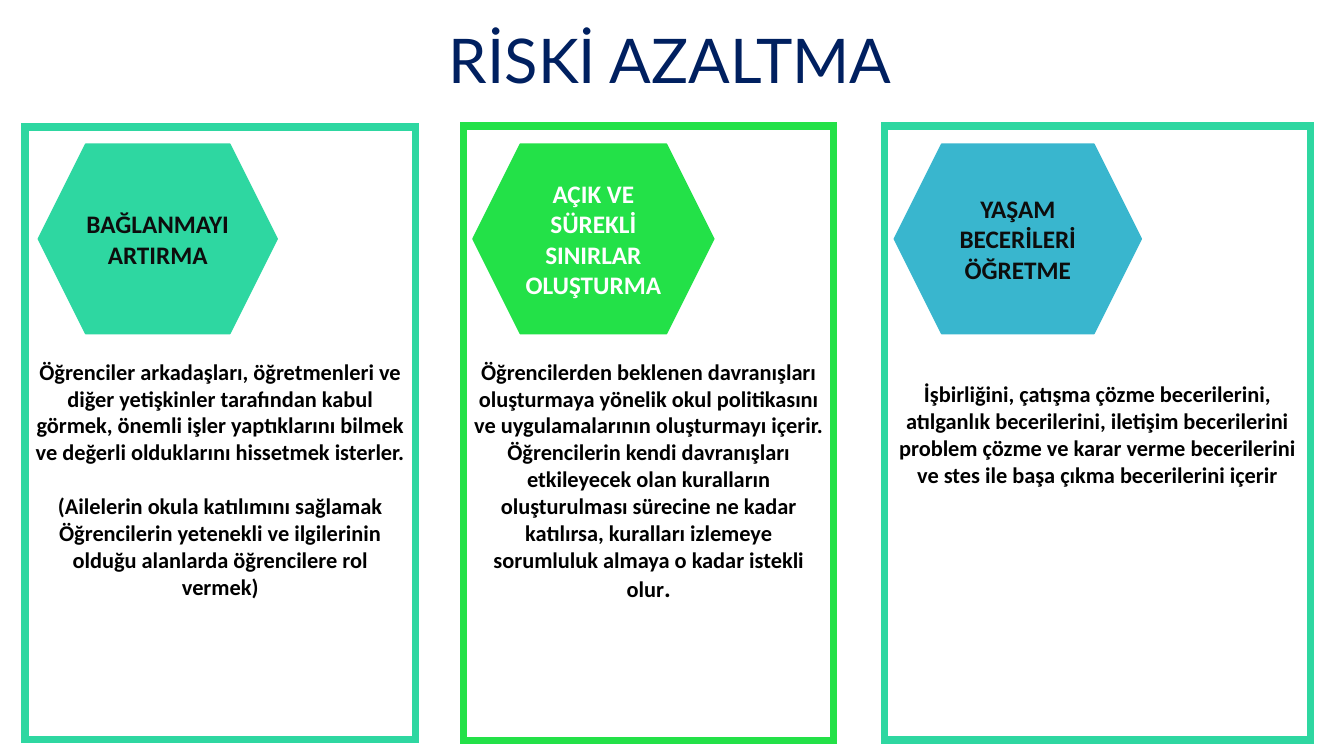
from dataclasses import dataclass

from lxml.etree import SubElement
from pptx import Presentation
from pptx.dml.color import RGBColor
from pptx.enum.shapes import MSO_SHAPE as Shape
from pptx.enum.text import MSO_ANCHOR as Anchor, PP_ALIGN as Align
from pptx.oxml.ns import qn
from pptx.util import Pt

EMU_PER_PX = 9144


@dataclass(frozen=True)
class Theme:
    title_font: str = "Lato"
    body_font: str = "Calibri"
    title_size: int = 44
    label_size: int = 18
    body_size: int = 16
    frame_width: float = 5.25
    gap: float = 19.5
    navy: str = "002060"
    mint: str = "2ED7A1"
    green: str = "23E148"
    blue: str = "39B6CE"
    dark: str = "0D0D0D"
    white: str = "FFFFFF"
    black: str = "000000"


THEME = Theme()


@dataclass(frozen=True)
class Column:
    hexagon_box: tuple
    hexagon_color: str
    label_color: str
    label: str
    frame_box: tuple
    frame_color: str
    text_top: int
    body: tuple
    gap_before: int = 0


COLUMNS = (
    Column(
        (38, 143, 237, 188), THEME.mint, THEME.dark, "BAĞLANMAYI ARTIRMA",
        (25, 126, 387, 608), THEME.mint, 355,
        (
            "Öğrenciler arkadaşları, öğretmenleri ve diğer yetişkinler tarafından kabul "
            "görmek, önemli işler yaptıklarını bilmek ve değerli olduklarını hissetmek isterler.",
            "(Ailelerin okula katılımını sağlamak",
            "Öğrencilerin yetenekli ve ilgilerinin olduğu alanlarda öğrencilere rol vermek)",
        ),
        gap_before=1,
    ),
    Column(
        (469, 143, 239, 188), THEME.green, THEME.white, "AÇIK VE SÜREKLİ SINIRLAR OLUŞTURMA",
        (460, 125, 367, 610), THEME.green, 355,
        (
            "Öğrencilerden beklenen davranışları oluşturmaya yönelik okul politikasını "
            "ve uygulamalarının oluşturmayı içerir.",
            "Öğrencilerin kendi davranışları etkileyecek olan kuralların oluşturulması sürecine "
            "ne kadar katılırsa, kuralları izlemeye sorumluluk almaya o kadar istekli olur.",
        ),
    ),
    Column(
        (887, 143, 245, 188), THEME.blue, THEME.dark, "YAŞAM BECERİLERİ ÖĞRETME",
        (877, 125, 423, 609), THEME.mint, 377,
        (
            "İşbirliğini, çatışma çözme becerilerini, atılganlık becerilerini, iletişim "
            "becerilerini problem çözme ve karar verme becerilerini ve stes ile başa çıkma "
            "becerilerini içerir",
        ),
    ),
)


def px(length):
    return length * EMU_PER_PX


def write(shape, texts, font_name, size, color, bold=True):
    frame = shape.text_frame
    frame.word_wrap = True
    for index, text in enumerate(texts):
        paragraph = frame.add_paragraph() if index else frame.paragraphs[0]
        paragraph.text = text
        paragraph.alignment = Align.CENTER
        font = paragraph.font
        font.name, font.size, font.bold = font_name, Pt(size), bold
        font.color.rgb = RGBColor.from_string(color)
    return frame


def add_outlined(slide, kind, box, color, width):
    shape = slide.shapes.add_shape(kind, *map(px, box))
    shape.shadow.inherit = False
    shape.line.color.rgb = RGBColor.from_string(color)
    shape.line.width = Pt(width)
    return shape


def add_title(slide, text):
    box = slide.shapes.add_textbox(*map(px, (321, 17, 688, 84)))
    write(box, [text], THEME.title_font, THEME.title_size, THEME.navy, bold=False)


def add_hexagon(slide, column):
    hexagon = add_outlined(slide, Shape.HEXAGON, column.hexagon_box, column.hexagon_color, 1)
    hexagon.fill.solid()
    hexagon.fill.fore_color.rgb = RGBColor.from_string(column.hexagon_color)
    frame = write(hexagon, [column.label], THEME.body_font, THEME.label_size, column.label_color)
    frame.vertical_anchor = Anchor.MIDDLE


def add_frame(slide, column):
    panel = add_outlined(
        slide, Shape.RECTANGLE, column.frame_box, column.frame_color, THEME.frame_width
    )
    panel.fill.background()
    SubElement(panel.line._get_or_add_ln(), qn("a:miter"), lim="800000")
    frame = write(panel, column.body, THEME.body_font, THEME.body_size, THEME.black)
    frame.vertical_anchor = Anchor.TOP
    frame.margin_top = px(column.text_top - column.frame_box[1])
    if column.gap_before:
        frame.paragraphs[column.gap_before].space_before = Pt(THEME.gap)
    last = frame.paragraphs[-1]
    if last.text.endswith("olur."):
        last.runs[0].text = last.text[:-1]
        full_stop = last.add_run()
        full_stop.text = "."
        full_stop.font.size = Pt(THEME.label_size)


def main():
    presentation = Presentation()
    presentation.slide_width, presentation.slide_height = px(1333), px(750)
    slide = presentation.slides.add_slide(presentation.slide_layouts[6])
    add_title(slide, "RİSKİ AZALTMA")
    for column in COLUMNS:
        add_hexagon(slide, column)
        add_frame(slide, column)
    presentation.save("out.pptx")


if __name__ == "__main__":
    main()
